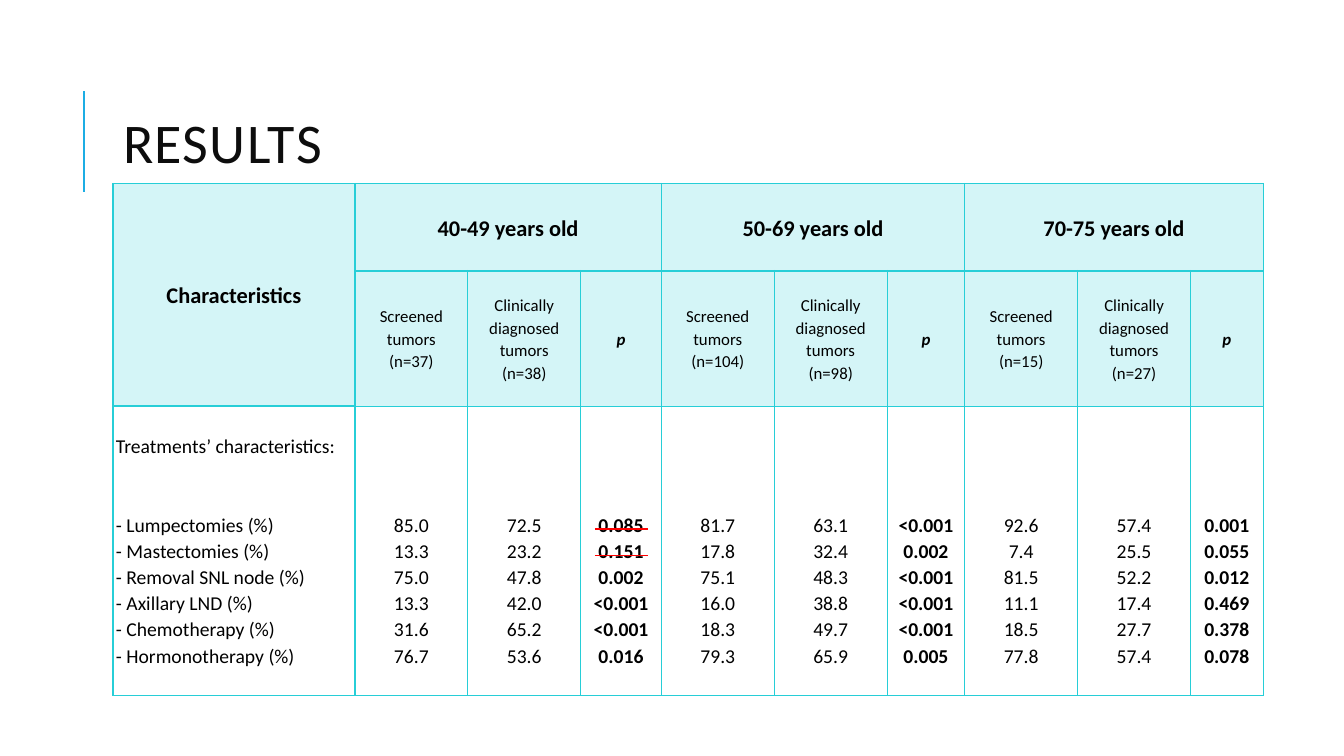
from dataclasses import dataclass

from lxml import etree
from pptx import Presentation
from pptx.dml.color import RGBColor
from pptx.enum.shapes import MSO_CONNECTOR
from pptx.enum.text import MSO_ANCHOR, MSO_AUTO_SIZE, PP_ALIGN
from pptx.oxml.ns import qn
from pptx.util import Inches, Pt

STRAIGHT = MSO_CONNECTOR.STRAIGHT
TOP, MIDDLE = MSO_ANCHOR.TOP, MSO_ANCHOR.MIDDLE
LEFT, CENTER = PP_ALIGN.LEFT, PP_ALIGN.CENTER
NO_FIT = MSO_AUTO_SIZE.NONE


@dataclass(frozen=True)
class Theme:
    """Colours, font and type sizes of the slide."""
    font: str = "Calibri"
    accent: str = "1CADE4"
    title: str = "0D0D0D"
    text: str = "000000"
    border: str = "27CED7"
    head_fill: str = "D4F5F7"
    body_fill: str = "FFFFFF"
    strike: str = "FF0000"
    title_size: int = 40
    group_size: int = 16
    head_size: int = 12
    body_size: int = 14
    leading: float = 1.1


THEME = Theme()
SLIDE_W, SLIDE_H = 13.33, 7.5
TITLE_BOX = (1.12, 0.64, 10.63, 1.64)
TABLE_AT = (1.12, 1.82)
LABEL_W, VALUE_W = 2.4, 1.12
ROWS = (0.87, 1.34, 2.87)
LINE_H = 0.26
LABEL_TOP, VALUES_TOP = LINE_H, 4 * LINE_H

TREATMENTS = ("Lumpectomies", "Mastectomies", "Removal SNL node",
              "Axillary LND", "Chemotherapy", "Hormonotherapy")
GROUPS = (
    ("40-49 years old", 37, 38, 0.8,
     ("85.0", "13.3", "75.0", "13.3", "31.6", "76.7"),
     ("72.5", "23.2", "47.8", "42.0", "65.2", "53.6"),
     ("0.085", "0.151", "0.002", "<0.001", "<0.001", "0.016")),
    ("50-69 years old", 104, 98, 0.77,
     ("81.7", "17.8", "75.1", "16.0", "18.3", "79.3"),
     ("63.1", "32.4", "48.3", "38.8", "49.7", "65.9"),
     ("<0.001", "0.002", "<0.001", "<0.001", "<0.001", "0.005")),
    ("70-75 years old", 15, 27, 0.72,
     ("92.6", "7.4", "81.5", "11.1", "18.5", "77.8"),
     ("57.4", "25.5", "52.2", "17.4", "27.7", "57.4"),
     ("0.001", "0.055", "0.012", "0.469", "0.378", "0.078")),
)


def rgb(value):
    """Turn a hex string into a colour."""
    return RGBColor.from_string(value)


def style_runs(p, size, color, bold=False, italic=False):
    """Format every run of a paragraph."""
    for r in p.runs:
        f = r.font
        f.name, f.size, f.bold, f.italic = THEME.font, Pt(size), bold, italic
        f.color.rgb = rgb(color)


def add_line(slide, x1, y1, x2, y2, color, width):
    """Draw a plain straight line."""
    c = slide.shapes.add_connector(STRAIGHT, *map(Inches, (x1, y1, x2, y2)))
    c.line.color.rgb = rgb(color)
    c.line.width = Pt(width)
    etree.SubElement(c._element.spPr, qn("a:effectLst"))


def set_borders(cell, top=1, bottom=1):
    """Give a cell its four border lines."""
    tcPr = cell._tc.get_or_add_tcPr()
    sides = (("L", 1), ("R", 1), ("T", top), ("B", bottom))
    for i, (side, width) in enumerate(sides):
        ln = etree.Element(qn(f"a:ln{side}"), w=str(Pt(width)))
        fill = etree.SubElement(ln, qn("a:solidFill"))
        etree.SubElement(fill, qn("a:srgbClr"), val=THEME.border)
        tcPr.insert(i, ln)


def fill_cell(cell, lines, size, fill=THEME.head_fill, align=CENTER,
              anchor=MIDDLE, top=0, bold=False, italic=False):
    """Write lines of text into a cell and format them."""
    cell.margin_left = cell.margin_right = Inches(0.03)
    cell.margin_top, cell.margin_bottom = Inches(top), 0
    cell.vertical_anchor = anchor
    cell.fill.solid()
    cell.fill.fore_color.rgb = rgb(fill)
    cell.text_frame.text = "\n".join(lines)
    for p in cell.text_frame.paragraphs:
        p.alignment, p.line_spacing = align, THEME.leading
        style_runs(p, size, THEME.text, bold, italic)


def fill_labels(table):
    """Fill the column that names the characteristics."""
    fill_cell(table.cell(0, 0), ["Characteristics"], THEME.group_size, bold=True)
    labels = [f"- {name} (%)" for name in TREATMENTS]
    cell = table.cell(2, 0)
    fill_cell(cell, ["Treatments’ characteristics:", *labels], THEME.body_size,
              THEME.body_fill, LEFT, TOP, LABEL_TOP)
    cell.text_frame.paragraphs[1].space_before = Pt(2 * LINE_H * 72)
    table.cell(0, 0).merge(table.cell(1, 0))


def fill_group(table, col, group):
    """Fill the three columns of one age group."""
    name, screened, clinical, _, *values = group
    fill_cell(table.cell(0, col), [name], THEME.group_size, bold=True)
    heads = (["Screened tumors", f"(n={screened})"],
             ["Clinically diagnosed tumors", f"(n={clinical})"], ["p"])
    for i, (head, column) in enumerate(zip(heads, values)):
        is_p = i == 2
        fill_cell(table.cell(1, col + i), head, THEME.head_size,
                  bold=is_p, italic=is_p)
        fill_cell(table.cell(2, col + i), column, THEME.body_size,
                  THEME.body_fill, anchor=TOP, top=VALUES_TOP, bold=is_p)
    table.cell(0, col).merge(table.cell(0, col + 2))


def add_results_table(slide, left, top):
    """Place the table of treatments by age group."""
    widths = [LABEL_W]
    for group in GROUPS:
        widths += [VALUE_W, VALUE_W, group[3]]
    box = map(Inches, (left, top, sum(widths), sum(ROWS)))
    table = slide.shapes.add_table(len(ROWS), len(widths), *box).table
    table.first_row = table.horz_banding = False
    for column, width in zip(table.columns, widths):
        column.width = Inches(width)
    for row, height in zip(table.rows, ROWS):
        row.height = Inches(height)
    fill_labels(table)
    for i, group in enumerate(GROUPS):
        fill_group(table, 1 + 3 * i, group)
    for r in range(len(ROWS)):
        for c in range(len(widths)):
            heavy_row = 1 if c == 0 else 0
            set_borders(table.cell(r, c), 2 if r == heavy_row + 1 else 1,
                        2 if r == heavy_row else 1)


def add_strikes(slide, left, top):
    """Strike the first two p values of the youngest group."""
    x = left + LABEL_W + 2 * VALUE_W + 0.14
    y = top + sum(ROWS[:2]) + VALUES_TOP + 0.18
    for i in range(2):
        line_y = y + i * LINE_H
        add_line(slide, x, line_y, x + 0.53, line_y, THEME.strike, 1.25)


def add_title(slide, left, top, width, height):
    """Place the title and the accent rule beside it."""
    sp = slide.shapes.title
    sp.left, sp.top, sp.width, sp.height = map(Inches, (left, top, width, height))
    tf = sp.text_frame
    tf.text = "RESULTS"
    tf.auto_size, tf.vertical_anchor = NO_FIT, MIDDLE
    p = tf.paragraphs[0]
    p.alignment, p.line_spacing = LEFT, 0.8
    style_runs(p, THEME.title_size, THEME.title)
    p.runs[0].font._element.set("spc", "100")
    x, y = left - 0.29, top + 0.26
    add_line(slide, x, y + 1, x, y, THEME.accent, 1.5)


def main():
    """Build and save the slide."""
    prs = Presentation()
    prs.slide_width, prs.slide_height = Inches(SLIDE_W), Inches(SLIDE_H)
    slide = prs.slides.add_slide(prs.slide_layouts[5])
    add_title(slide, *TITLE_BOX)
    add_results_table(slide, *TABLE_AT)
    add_strikes(slide, *TABLE_AT)
    prs.save("out.pptx")


if __name__ == "__main__":
    main()
